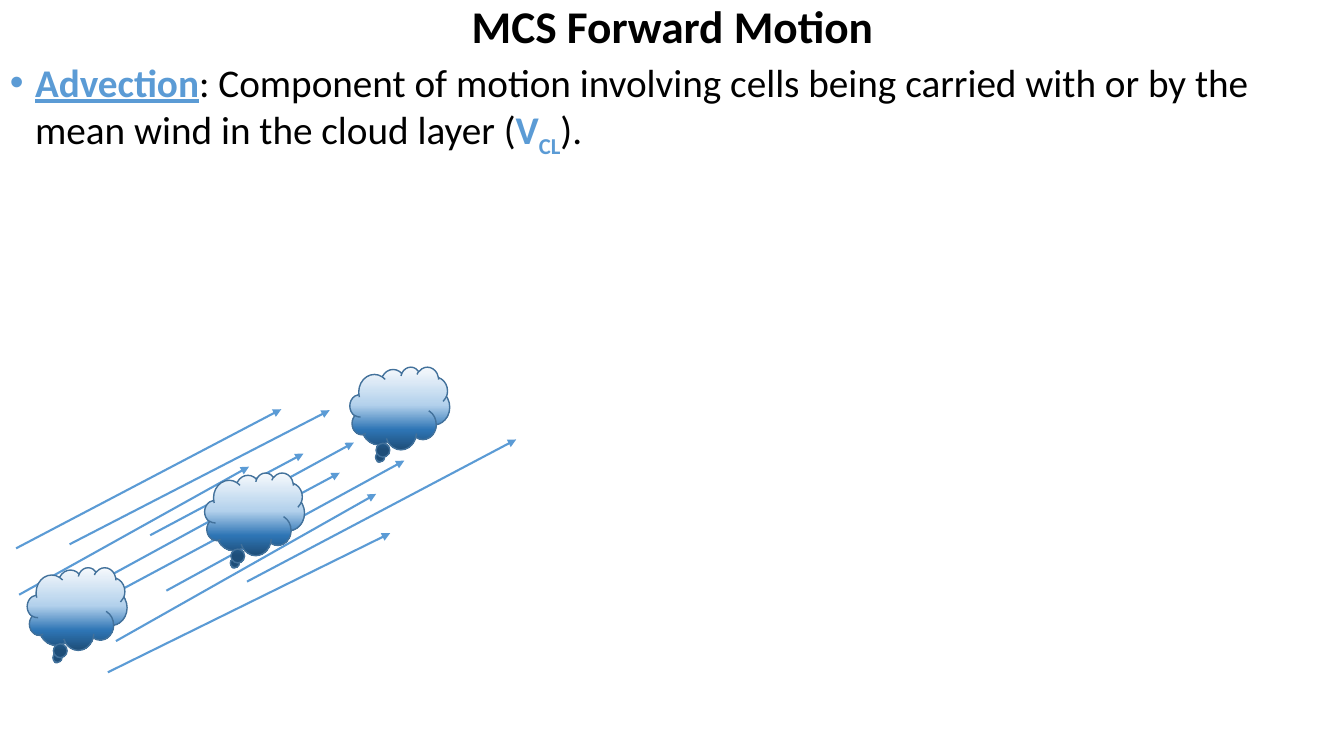
from lxml import etree
from pptx import Presentation
from pptx.dml.color import RGBColor
from pptx.enum.shapes import MSO_CONNECTOR, MSO_SHAPE
from pptx.enum.text import MSO_ANCHOR, PP_ALIGN
from pptx.oxml.ns import qn
from pptx.util import Inches, Pt

STRAIGHT = MSO_CONNECTOR.STRAIGHT
CLOUD = MSO_SHAPE.CLOUD_CALLOUT
MIDDLE = MSO_ANCHOR.MIDDLE
CENTER = PP_ALIGN.CENTER

THEME = {
    "font": "Calibri",
    "title_size": Pt(32.4),
    "body_size": Pt(28),
    "text": RGBColor.from_string("000000"),
    "accent": RGBColor.from_string("5B9BD5"),
    "cloud_line": RGBColor.from_string("42719B"),
    "cloud_stops": [(0, "F6F9FC"), (46, "B3D1EC"), (76, "2E75B5"), (100, "1E4E79")],
}


def add_xml(parent, tag, **attrs):
    """Append a DrawingML element to parent."""
    return etree.SubElement(parent, qn(tag), attrs)


def set_font(font, size, color, bold):
    font.name = THEME["font"]
    font.size = size
    font.color.rgb = color
    font.bold = bold


prs = Presentation()
prs.slide_width = Inches(13.33)
prs.slide_height = Inches(7.5)
s = prs.slides.add_slide(prs.slide_layouts[5])

# Title
title = s.shapes.title
title.left, title.top = Inches(0.92), Inches(0)
title.width, title.height = Inches(11.5), Inches(0.58)
tf = title.text_frame
tf.vertical_anchor = MIDDLE
p = tf.paragraphs[0]
p.text = "MCS Forward Motion"
p.alignment = CENTER
p.line_spacing = 0.9
set_font(p.font, THEME["title_size"], THEME["text"], True)

# Definition bullet
tf = s.shapes.add_textbox(Inches(0), Inches(0.58), Inches(13.33), Inches(4.76)).text_frame
tf.word_wrap = True
p = tf.paragraphs[0]
p.line_spacing = 0.9
pPr = p._p.get_or_add_pPr()
pPr.set("marL", str(Inches(0.25)))
pPr.set("indent", str(Inches(-0.25)))
add_xml(add_xml(pPr, "a:buClr"), "a:srgbClr", val=str(THEME["accent"]))
add_xml(pPr, "a:buFont", typeface="Arial")
add_xml(pPr, "a:buChar", char="•")
definition = [
    ("Advection", True),
    (": Component of motion involving cells being carried with or by the "
     "mean wind in the cloud layer (", False),
    ("V", True),
    ("CL", True),
    (").", False),
]
for text, is_term in definition:
    r = p.add_run()
    r.text = text
    set_font(r.font, THEME["body_size"], THEME["accent" if is_term else "text"], is_term)
    if text == "Advection":
        r.font.underline = True
    elif text == "CL":
        r.font._element.set("baseline", "-25000")

# Wind arrows: start x, start y, end x, end y
wind_arrows = [
    (0.16, 5.44, 2.79, 4.06),
    (0.19, 5.9, 2.47, 4.63),
    (0.69, 5.4, 3.27, 4.07),
    (0.78, 5.88, 3.51, 4.39),
    (1.49, 5.31, 3.01, 4.5),
    (1.11, 5.9, 3.37, 4.69),
    (1.15, 6.36, 3.73, 4.9),
    (1.65, 5.86, 4.01, 4.57),
    (1.07, 6.67, 3.87, 5.29),
    (2.45, 5.77, 5.12, 4.36),
]
for ends in wind_arrows:
    arrow = s.shapes.add_connector(STRAIGHT, *(Inches(v) for v in ends))
    arrow.line.color.rgb = THEME["accent"]
    arrow.line.width = Pt(1.5)
    add_xml(arrow.line._get_or_add_ln(), "a:tailEnd", type="triangle")
    add_xml(arrow._element.spPr, "a:effectLst")

# Storm cells carried along by the wind
for left, top in [(0.27, 5.63), (2.03, 4.69), (3.47, 3.64)]:
    sp = s.shapes.add_shape(CLOUD, Inches(left), Inches(top), Inches(0.99), Inches(0.82))
    sp.shadow.inherit = False
    sp.adjustments[0], sp.adjustments[1] = -0.208, 0.625
    sp.line.color.rgb = THEME["cloud_line"]
    sp.line.width = Pt(1)
    sp.fill.gradient()
    sp.fill.gradient_angle = 270
    stops = sp._element.spPr.find(qn("a:gradFill")).find(qn("a:gsLst"))
    for stop in list(stops):
        stops.remove(stop)
    for percent, color in THEME["cloud_stops"]:
        stop = add_xml(stops, "a:gs", pos=str(percent * 1000))
        add_xml(stop, "a:srgbClr", val=color)

prs.save("out.pptx")
